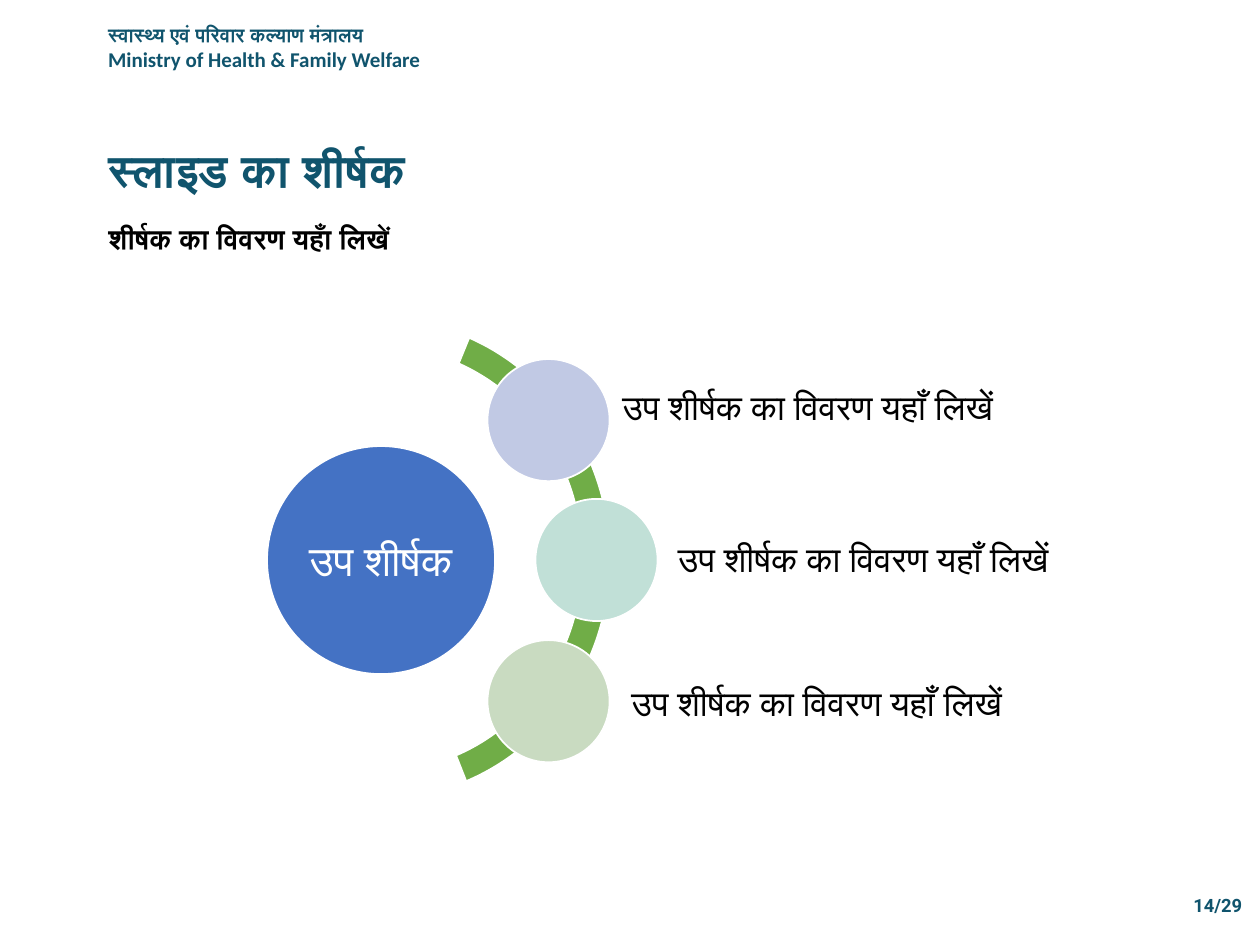
from dataclasses import dataclass

from lxml import etree
from pptx import Presentation
from pptx.dml.color import RGBColor
from pptx.enum.shapes import MSO_SHAPE
from pptx.enum.text import MSO_ANCHOR, MSO_AUTO_SIZE, PP_ALIGN
from pptx.oxml.ns import qn
from pptx.util import Pt

ELLIPSE, BLOCK_ARC = MSO_SHAPE.OVAL, MSO_SHAPE.BLOCK_ARC
TOP, MIDDLE = MSO_ANCHOR.TOP, MSO_ANCHOR.MIDDLE
LEFT, CENTER = PP_ALIGN.LEFT, PP_ALIGN.CENTER
NO_AUTOFIT = MSO_AUTO_SIZE.NONE


@dataclass(frozen=True)
class TextStyle:
    font: str
    size: float
    color: str
    bold: bool = False
    spacing: float | Pt | None = None


@dataclass(frozen=True)
class Theme:
    hub: str = "4472C4"
    arc: str = "70AD47"
    outline: str = "FFFFFF"
    ministry_hindi: TextStyle = TextStyle("Calibri", 11.2, "10546D", True)
    ministry_english: TextStyle = TextStyle("Calibri", 12, "10546D", True)
    page: TextStyle = TextStyle("Roboto", 10.5, "10546D", True)
    title: TextStyle = TextStyle("Roboto", 26, "10546D", True, 0.8)
    description: TextStyle = TextStyle("Calibri", 16, "000000", True, Pt(12.4))
    hub_label: TextStyle = TextStyle("Roboto", 24, "FFFFFF", False, Pt(28))
    item_label: TextStyle = TextStyle("Roboto", 20, "000000", False, Pt(24))


@dataclass(frozen=True)
class Box:
    left: float
    top: float
    width: float
    height: float

    def lengths(self) -> tuple:
        return Pt(self.left), Pt(self.top), Pt(self.width), Pt(self.height)


@dataclass(frozen=True)
class Item:
    circle_left: float
    circle_top: float
    label_left: float
    label_top: float
    color: str


THEME = Theme()
CIRCLE_SIZE = 69.8
LABEL_INSET = 2.2
ITEM_TEXT = "उप शीर्षक का विवरण यहाँ लिखें"
ITEMS = (
    Item(278.6, 205.2, 353.5, 217.4, "C1C9E4"),
    Item(306, 285.1, 385.2, 303.8, "C1E0D7"),
    Item(278.6, 365.8, 358.6, 386.6, "C9DBC1"),
)


def format_paragraph(paragraph, style: TextStyle, alignment=LEFT) -> None:
    paragraph.alignment = alignment
    if style.spacing is not None:
        paragraph.line_spacing = style.spacing
    for run in paragraph.runs:
        run.font.name = style.font
        run.font.size = Pt(style.size)
        run.font.bold = style.bold
        run.font.color.rgb = RGBColor.from_string(style.color)


def fill_placeholder(shape, box: Box, text: str, style: TextStyle) -> None:
    shape.left, shape.top, shape.width, shape.height = box.lengths()
    frame = shape.text_frame
    frame.text = text
    frame.vertical_anchor = TOP
    frame.auto_size = NO_AUTOFIT
    paragraph = frame.paragraphs[0]
    properties = paragraph._p.get_or_add_pPr()
    properties.set("marL", "0")
    properties.set("indent", "0")
    etree.SubElement(properties, qn("a:buNone"))
    paragraph.space_before = Pt(0)
    format_paragraph(paragraph, style)


def add_text(slide, box: Box, text: str, styles: tuple[TextStyle, ...],
             alignment=LEFT, anchor=TOP, inset: float | None = None) -> None:
    frame = slide.shapes.add_textbox(*box.lengths()).text_frame
    frame.word_wrap = True
    frame.vertical_anchor = anchor
    if inset is not None:
        frame.margin_left = frame.margin_right = Pt(inset)
        frame.margin_top = frame.margin_bottom = Pt(inset)
    frame.text = text
    for paragraph, style in zip(frame.paragraphs, styles):
        format_paragraph(paragraph, style, alignment)


def add_figure(slide, kind, box: Box, color: str):
    shape = slide.shapes.add_shape(kind, *box.lengths())
    shape.shadow.inherit = False
    shape.fill.solid()
    shape.fill.fore_color.rgb = RGBColor.from_string(color)
    shape.line.color.rgb = RGBColor.from_string(THEME.outline)
    shape.line.width = Pt(1)
    return shape


def add_item(slide, item: Item) -> None:
    circle = Box(item.circle_left, item.circle_top, CIRCLE_SIZE, CIRCLE_SIZE)
    add_figure(slide, ELLIPSE, circle, item.color)
    label = Box(item.label_left, item.label_top, 224, 30.2)
    add_text(slide, label, ITEM_TEXT, (THEME.item_label,),
             anchor=MIDDLE, inset=LABEL_INSET)


def add_diagram(slide) -> None:
    add_figure(slide, ELLIPSE, Box(152.6, 254.9, 130.3, 130.3), THEME.hub)
    add_text(slide, Box(171.4, 274.3, 92.2, 92.2), "उप शीर्षक",
             (THEME.hub_label,), CENTER, MIDDLE, LABEL_INSET)
    arc = add_figure(slide, BLOCK_ARC, Box(85, 182.2, 263.5, 274.3), THEME.arc)
    for index, value in enumerate((175.28, 41.19, 0.06)):
        arc.adjustments[index] = value
    for item in ITEMS:
        add_item(slide, item)


def main() -> None:
    presentation = Presentation()
    presentation.slide_width, presentation.slide_height = Pt(720), Pt(540)
    slide = presentation.slides.add_slide(presentation.slide_layouts[1])
    add_text(slide, Box(671.8, 507.6, 48.2, 20.2), "14/29", (THEME.page,), CENTER)
    add_text(slide, Box(54.7, 9.4, 247, 35.3),
             "स्वास्थ्य एवं परिवार कल्याण मंत्रालय\nMinistry of Health & Family Welfare",
             (THEME.ministry_hindi, THEME.ministry_english))
    fill_placeholder(slide.shapes.title, Box(54.7, 83.5, 331.2, 33.8),
                     "स्लाइड का शीर्षक", THEME.title)
    fill_placeholder(slide.placeholders[1], Box(54.7, 129.6, 388, 26.6),
                     "शीर्षक का विवरण यहाँ लिखें", THEME.description)
    add_diagram(slide)
    presentation.save("out.pptx")


if __name__ == "__main__":
    main()
